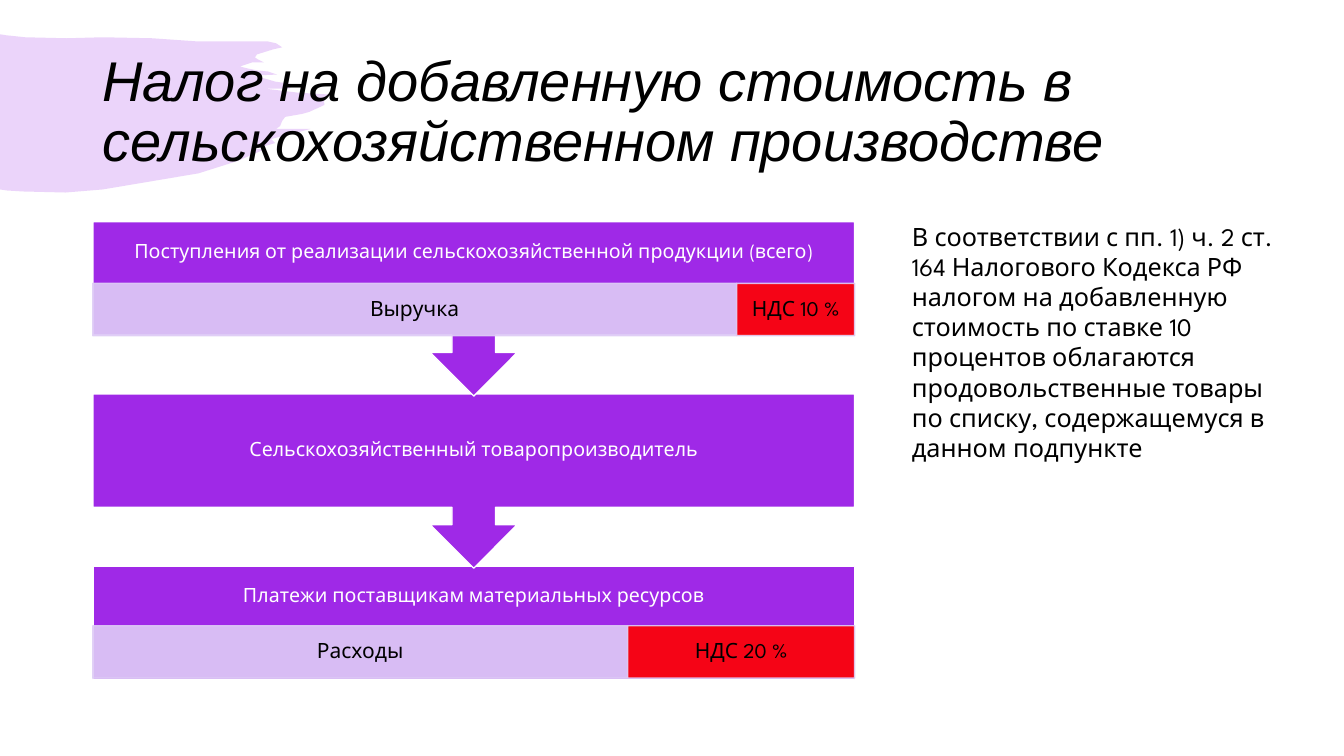
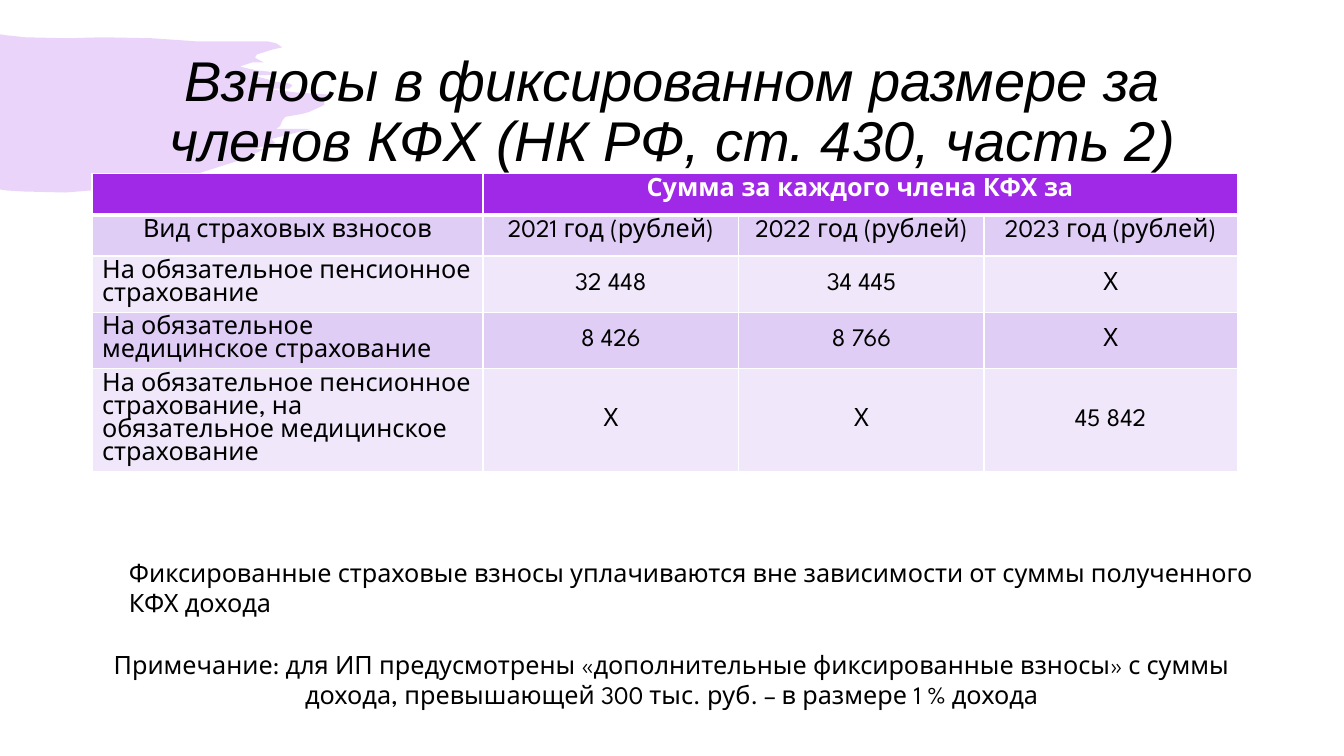
from lxml import etree
from pptx import Presentation
from pptx.dml.color import RGBColor
from pptx.enum.shapes import MSO_SHAPE
from pptx.enum.text import MSO_ANCHOR, PP_ALIGN
from pptx.oxml.ns import qn
from pptx.util import Cm, Pt

LEFT, CENTER = PP_ALIGN.LEFT, PP_ALIGN.CENTER
TOP, MIDDLE = MSO_ANCHOR.TOP, MSO_ANCHOR.MIDDLE
RECT, CALLOUT = MSO_SHAPE.RECTANGLE, MSO_SHAPE.DOWN_ARROW_CALLOUT

# Shared look
PURPLE, LILAC, PALE = "9F29E7", "DFCDF6", "F0E8FA"
RED, BLACK, WHITE = "FF0000", "000000", "FFFFFF"
TITLE_FONT, BODY_FONT = "Arial", "League Spartan"
TITLE_BOX = (2.33, 1.02, 29.21, 3.68)
NOTE_LEADING, TABLE_LEADING = Pt(21.6), Pt(16.5)

# Outline of the brush stroke, in hundredths of an inch
BRUSH_UNIT = Cm(0.0254)
BRUSH = [
    (0, 34), (6, 35), (25, 37), (66, 38), (102, 37), (151, 38), (194, 41),
    (248, 41), (265, 41), (274, 43), (280, 47), (271, 49), (255, 54),
    (253, 57), (256, 59), (262, 62), (250, 62), (238, 66), (246, 68),
    (256, 70), (266, 71), (275, 74), (251, 75), (263, 78), (273, 81),
    (280, 82), (288, 83), (290, 85), (287, 88), (284, 88), (263, 88),
    (296, 92), (330, 94), (321, 97), (322, 104), (318, 106), (307, 111),
    (300, 113), (283, 116), (280, 120), (278, 125), (274, 128), (308, 128),
    (269, 138), (273, 142), (252, 148), (263, 148), (235, 160), (197, 172),
    (102, 188), (65, 191), (23, 190), (7, 189), (0, 188),
]

# Content
FLOW = [  # heading, heading height, (base, tax, share of tax)
    ("Поступления от реализации сельскохозяйственной продукции (всего)", 1.55,
     ("Выручка", "НДС 10 %", 0.155)),
    ("Сельскохозяйственный товаропроизводитель", 2.85, None),
    ("Платежи поставщикам материальных ресурсов", 1.5,
     ("Расходы", "НДС 20 %", 0.298)),
]
FEES = [
    ["", "Сумма за каждого члена КФХ за", "", ""],
    ["Вид страховых взносов", "2021 год (рублей)", "2022 год (рублей)",
     "2023 год (рублей)"],
    ["На обязательное пенсионное страхование", "32 448", "34 445", "Х"],
    ["На обязательное медицинское страхование", "8 426", "8 766", "Х"],
    ["На обязательное пенсионное страхование, на обязательное медицинское "
     "страхование", "Х", "Х", "45 842"],
]
FEE_COLUMNS = [9.85, 6.45, 6.18, 6.38]
FEE_ROWS = [1.04, 1.04, 1.42, 1.42, 2.6]


def rgb(hex_color):
    return RGBColor.from_string(hex_color)


def write_text(frame, text, size=18, color=BLACK, font=BODY_FONT, bold=False,
               italic=False, align=LEFT, anchor=TOP, leading=None):
    frame.word_wrap = True
    frame.vertical_anchor = anchor
    paragraph = frame.paragraphs[0]
    paragraph.alignment = align
    paragraph.line_spacing = leading
    run = paragraph.add_run()
    run.text = text
    run.font.name, run.font.size = font, Pt(size)
    run.font.bold, run.font.italic = bold, italic
    run.font.color.rgb = rgb(color)


def paint(shape, fill, line=None, opacity=100):
    shape.shadow.inherit = False
    shape.fill.solid()
    shape.fill.fore_color.rgb = rgb(fill)
    if line:
        shape.line.color.rgb = rgb(line)
        shape.line.width = Pt(1)
    else:
        shape.line.fill.background()
    if opacity < 100:
        for color in shape.element.spPr.iter(qn("a:srgbClr")):
            etree.SubElement(color, qn("a:alpha"), val=str(opacity * 1000))


def add_box(slide, kind, box, text, fill, line, opacity=100,
            insets=(0.3, 0.05, 0.3, 0.05), **text_format):
    shape = slide.shapes.add_shape(kind, *map(Cm, box))
    paint(shape, fill, line, opacity)
    frame = shape.text_frame
    (frame.margin_left, frame.margin_top,
     frame.margin_right, frame.margin_bottom) = map(Cm, insets)
    write_text(frame, text, align=CENTER, anchor=MIDDLE, leading=0.9,
               **text_format)


def add_note(slide, box, text, align=LEFT):
    note = slide.shapes.add_textbox(*map(Cm, box))
    write_text(note.text_frame, text, align=align, leading=NOTE_LEADING)


def prepare_layout(layout, slide):
    """Place the title and the brush stroke once, for all slides."""
    title = layout.placeholders[0]
    title.left, title.top, title.width, title.height = map(Cm, TITLE_BOX)
    builder = slide.shapes.build_freeform(*BRUSH[0], scale=BRUSH_UNIT)
    builder.add_line_segments(BRUSH[1:], close=True)
    brush = builder.convert_to_shape()
    paint(brush, PURPLE, opacity=20)
    layout.shapes.element.insert(2, brush.element)


def set_title(slide, text, align):
    write_text(slide.shapes.title.text_frame, text, size=40, font=TITLE_FONT,
               italic=True, align=align, anchor=MIDDLE, leading=0.9)


def add_flow(slide, left, top, width):
    pitch, callout_height, body_height, detail_height = 4.34, 4.39, 2.85, 1.32
    last = len(FLOW) - 1
    # From the bottom up, so that each arrow lies over the next box
    for index in range(last, -1, -1):
        heading, heading_height, detail = FLOW[index]
        y = top + index * pitch
        kind, height = ((RECT, body_height) if index == last
                        else (CALLOUT, callout_height))
        add_box(slide, kind, (left, y, width, height), heading, PURPLE, WHITE,
                insets=(0.28, 0, 0.28, body_height - heading_height),
                size=14, color=WHITE)
        if detail:
            base, tax, share = detail
            tax_width = width * share
            base_width = width - tax_width
            for x, part_width, text, fill in (
                    (left, base_width, base, LILAC),
                    (left + base_width, tax_width, tax, RED)):
                add_box(slide, RECT,
                        (x, y + heading_height, part_width, detail_height),
                        text, fill, LILAC, opacity=90, size=15)


def set_borders(cell, row):
    properties = cell._tc.get_or_add_tcPr()
    for position, side in enumerate("LRTB"):
        heavy = (row, side) in ((0, "B"), (1, "T"))
        line = etree.Element(qn("a:ln" + side), w=str(Pt(3 if heavy else 1)))
        fill = etree.SubElement(line, qn("a:solidFill"))
        etree.SubElement(fill, qn("a:srgbClr"), val=WHITE)
        properties.insert(position, line)


def add_fee_table(slide, left, top):
    frame = slide.shapes.add_table(
        len(FEE_ROWS), len(FEE_COLUMNS), Cm(left), Cm(top),
        Cm(sum(FEE_COLUMNS)), Cm(sum(FEE_ROWS)))
    table = frame.table
    for column, width in zip(table.columns, FEE_COLUMNS):
        column.width = Cm(width)
    for row, height in zip(table.rows, FEE_ROWS):
        row.height = Cm(height)
    table.cell(0, 1).merge(table.cell(0, 3))
    for r, texts in enumerate(FEES):
        for c, text in enumerate(texts):
            cell = table.cell(r, c)
            cell.fill.solid()
            cell.fill.fore_color.rgb = rgb(
                PURPLE if r == 0 else LILAC if r % 2 else PALE)
            set_borders(cell, r)
            if text:
                write_text(cell.text_frame, text, bold=r == 0,
                           color=WHITE if r == 0 else BLACK,
                           align=LEFT if r > 1 and c == 0 else CENTER,
                           leading=TABLE_LEADING)
            cell.vertical_anchor = MIDDLE if r > 1 and c else TOP


def build_vat_slide(slide):
    set_title(slide, "Налог на добавленную стоимость в "
                     "сельскохозяйственном производстве", LEFT)
    add_flow(slide, 2.34, 5.59, 19.2)
    add_note(slide, (22.73, 5.44, 10.11, 6.4),
             "В соответствии с пп. 1) ч. 2 ст. 164 Налогового Кодекса РФ "
             "налогом на добавленную стоимость по ставке 10 процентов "
             "облагаются продовольственные товары по списку, содержащемуся "
             "в данном подпункте")


def build_fees_slide(slide):
    set_title(slide, "Взносы в фиксированном размере за членов КФХ "
                     "(НК РФ, ст. 430, часть 2)", CENTER)
    add_fee_table(slide, 2.32, 4.37)
    add_note(slide, (3, 13.92, 29.21, 1.8),
             "Фиксированные страховые взносы уплачиваются вне зависимости "
             "от суммы полученного КФХ дохода")
    add_note(slide, (1.65, 16.23, 30.56, 1.8),
             "Примечание: для ИП предусмотрены «дополнительные фиксированные "
             "взносы» с суммы дохода, превышающей 300 тыс. руб. – в размере "
             "1 % дохода", align=CENTER)


def main():
    deck = Presentation()
    deck.slide_width, deck.slide_height = Cm(33.87), Cm(19.05)
    layout = deck.slide_layouts[5]
    vat_slide, fees_slide = (deck.slides.add_slide(layout) for _ in range(2))
    prepare_layout(layout, vat_slide)
    build_vat_slide(vat_slide)
    build_fees_slide(fees_slide)
    deck.save("out.pptx")


if __name__ == "__main__":
    main()
